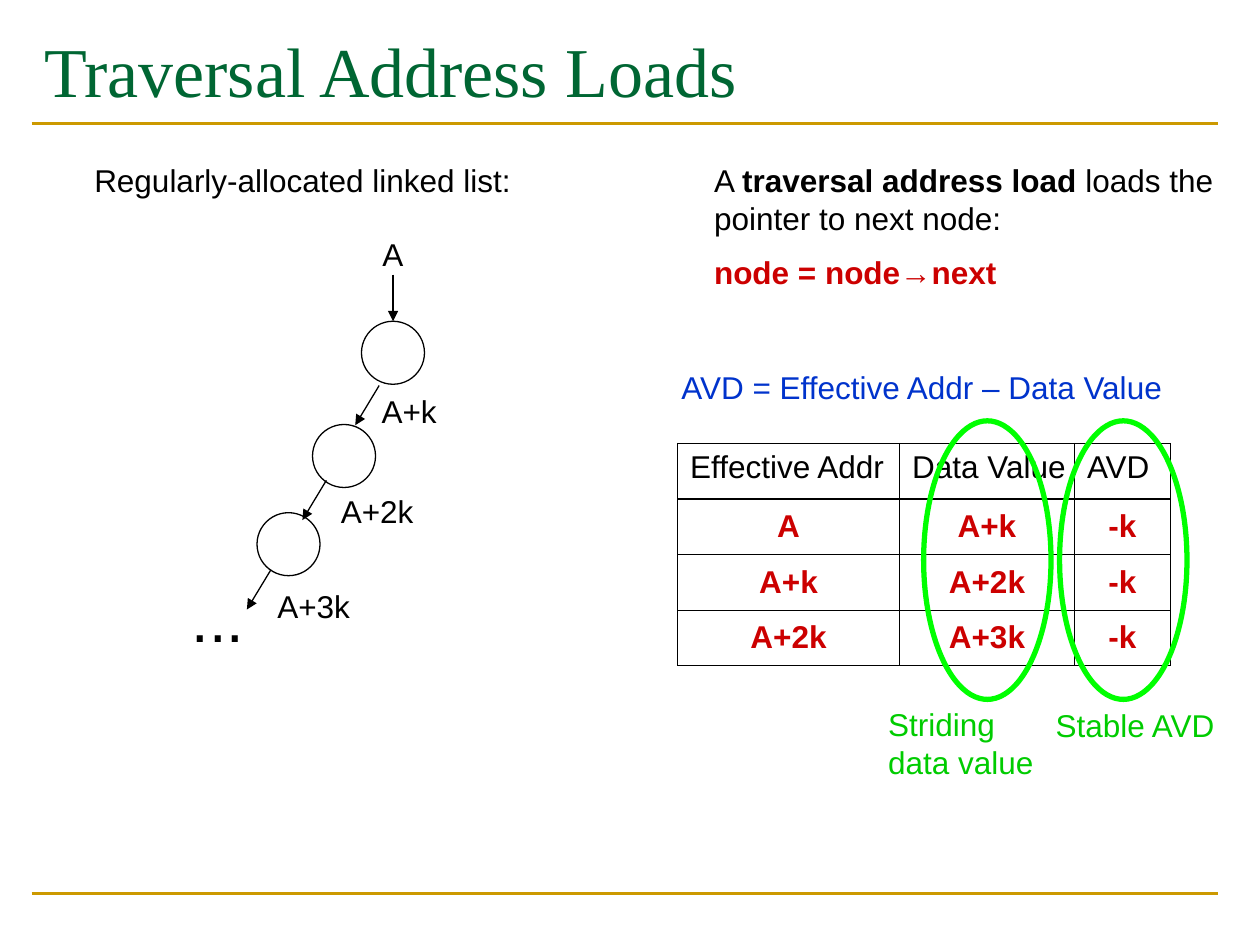
"""Builds the slide on traversal address loads in a linked list."""
from lxml.etree import SubElement
from pptx import Presentation
from pptx.dml.color import RGBColor
from pptx.enum.shapes import MSO_CONNECTOR, MSO_SHAPE
from pptx.enum.text import MSO_ANCHOR, MSO_AUTO_SIZE, PP_ALIGN
from pptx.oxml.ns import qn
from pptx.util import Pt

BLACK, RED, GOLD, BLUE = "000000", "CC0000", "CC9900", "0033CC"
GREEN, LIME, DARK_GREEN = "00CC00", "00FF00", "006633"


def color(value):
    return RGBColor.from_string(value)


def set_attributes(target, values):
    for name, value in values.items():
        setattr(target, name, value)


class SlideBuilder:
    """Holds the text style and the current slide."""

    def __init__(self, page, font="Arial", size=18):
        self.page, self.font, self.size = page, font, size

    def add_span(self, para, text, ink=BLACK, **formats):
        span = para.add_run()
        span.text = text
        set_attributes(span.font, {"name": self.font, "size": Pt(self.size), **formats})
        span.font.color.rgb = color(ink)

    def title(self, text, left, top, width, height):
        box = self.page.shapes.title
        set_attributes(box, {"left": Pt(left), "top": Pt(top), "width": Pt(width), "height": Pt(height)})
        set_attributes(box.text_frame, {"vertical_anchor": MSO_ANCHOR.TOP, "auto_size": MSO_AUTO_SIZE.NONE})
        para = box.text_frame.paragraphs[0]
        para.alignment = PP_ALIGN.LEFT
        self.add_span(para, text, DARK_GREEN, name="Times New Roman", size=Pt(40))

    def text(self, left, top, width, height, text, ink=BLACK, **formats):
        box = self.page.shapes.add_textbox(Pt(left), Pt(top), Pt(width), Pt(height))
        box.text_frame.word_wrap = True
        self.add_span(box.text_frame.paragraphs[0], text, ink, **formats)
        return box.text_frame

    def ellipse(self, left, top, width, height, ink=BLACK, weight=0.75):
        shape = self.page.shapes.add_shape(MSO_SHAPE.OVAL, Pt(left), Pt(top), Pt(width), Pt(height))
        shape.shadow.inherit = False
        shape.fill.background()
        shape.line.color.rgb = color(ink)
        shape.line.width = Pt(weight)
        return shape

    def line(self, start, end, ink=BLACK, weight=0.75, arrow=False):
        points = [Pt(value) for value in (*start, *end)]
        connector = self.page.shapes.add_connector(MSO_CONNECTOR.STRAIGHT, *points)
        connector.line.color.rgb = color(ink)
        connector.line.width = Pt(weight)
        properties = connector._element.spPr
        if arrow:
            SubElement(properties.find(qn("a:ln")), qn("a:tailEnd"), type="triangle")
        SubElement(properties, qn("a:effectLst"))
        return connector

    def border(self, cell):
        properties = cell._tc.get_or_add_tcPr()
        for side in ("lnL", "lnR", "lnT", "lnB"):
            edge = SubElement(properties, qn(f"a:{side}"), w=str(Pt(0.75)))
            SubElement(SubElement(edge, qn("a:solidFill")), qn("a:srgbClr"), val=BLACK)

    def table(self, left, top, widths, row_height, rows):
        frame = self.page.shapes.add_table(
            len(rows), len(widths), Pt(left), Pt(top), Pt(sum(widths)), Pt(row_height * len(rows)))
        table = frame.table
        set_attributes(table, {"first_row": False, "horz_banding": False})
        for column, width in zip(table.columns, widths):
            column.width = Pt(width)
        for index, row in enumerate(rows):
            header = index == 0
            table.rows[index].height = Pt(row_height)
            for cell, text in zip(table.rows[index].cells, row):
                self.border(cell)
                cell.fill.background()
                set_attributes(cell, {
                    "margin_left": Pt(7.2 if header else 0), "margin_right": 0,
                    "margin_top": Pt(3.6), "margin_bottom": 0 if header else Pt(3.6),
                    "vertical_anchor": MSO_ANCHOR.TOP if header else MSO_ANCHOR.MIDDLE})
                para = cell.text_frame.paragraphs[0]
                para.alignment = PP_ALIGN.LEFT if header else PP_ALIGN.CENTER
                self.add_span(para, text, BLACK if header else RED, bold=not header)


def draw_linked_list(builder):
    builder.text(46.8, 88.6, 272, 29, "Regularly-allocated linked list:")
    nodes = [builder.ellipse(left, top, 36, 36)
             for left, top in ((206.6, 183.6), (178.6, 242.6), (146.9, 293))]
    head = builder.line((224.6, 157), (224.6, 183.6), arrow=True)
    head.end_connect(nodes[0], 0)
    for left, top in ((216.7, 220.3), (186.5, 274.5), (154.8, 325.6)):
        builder.line((left, top), (left - 13.7, top + 22.7), arrow=True)
    for left, top, label in ((211.5, 131, "A"), (211, 220.3, "A+k"),
                             (187.7, 277.4, "A+2k"), (151.4, 332, "A+3k")):
        builder.text(left, top, 67.7, 29, label)
    builder.text(102.4, 327.6, 46, 50.4, "...", size=Pt(36))


def draw_explanation(builder):
    frame = builder.text(401, 88.6, 304, 83, "A ")
    first = frame.paragraphs[0]
    builder.add_span(first, "traversal address load", bold=True)
    builder.add_span(first, " loads the pointer to next node:")
    second = frame.add_paragraph()
    second.space_before = Pt(9)
    builder.add_span(second, "node = node→next", RED, bold=True)


def draw_address_table(builder):
    builder.text(382.3, 206.6, 295, 29, "AVD = Effective Addr – Data Value", BLUE)
    rows = [("Effective Addr", "Data Value", "AVD"),
            ("A", "A+k", "-k"), ("A+k", "A+2k", "-k"), ("A+2k", "A+3k", "-k")]
    builder.table(387.2, 253.4, (126.8, 100, 54.7), 31.8, rows)
    for left in (527.8, 605.5):
        builder.ellipse(left, 240.5, 72.8, 159.2, LIME, 3)
    builder.text(500.4, 399.6, 108.7, 50.4, "Striding data value", GREEN)
    builder.text(596.2, 399.6, 113, 29, "Stable AVD", GREEN)


def main():
    deck = Presentation()
    set_attributes(deck, {"slide_width": Pt(720), "slide_height": Pt(540)})
    builder = SlideBuilder(deck.slides.add_slide(deck.slide_layouts[5]))
    for top in (510.5, 70.6):
        builder.line((18, top), (696.2, top), GOLD, 1.5)
    builder.title("Traversal Address Loads", 18, 12.2, 678.2, 84.2)
    draw_linked_list(builder)
    draw_explanation(builder)
    draw_address_table(builder)
    deck.save("out.pptx")


if __name__ == "__main__":
    main()
